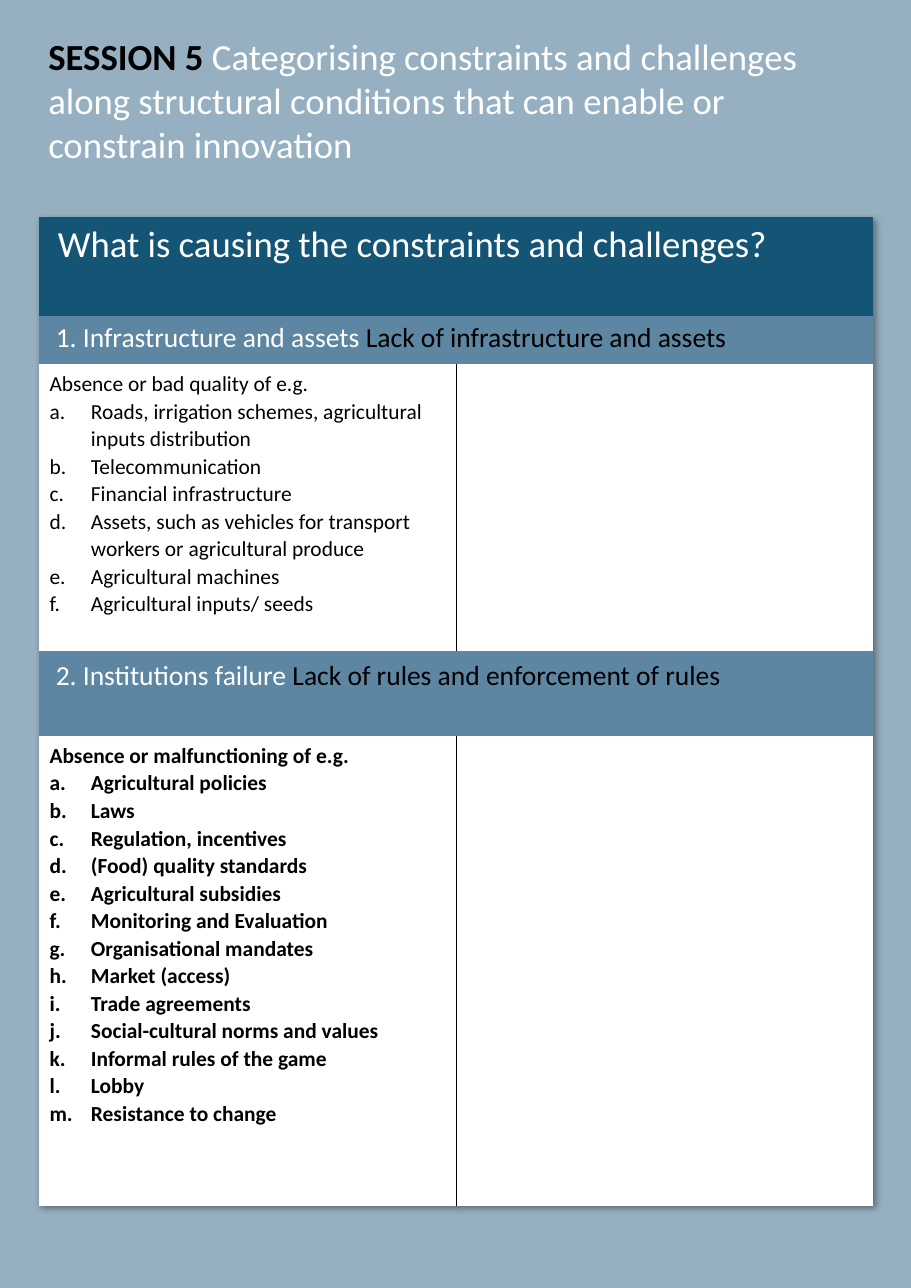
from lxml import etree
from pptx import Presentation
from pptx.dml.color import RGBColor
from pptx.enum.text import MSO_AUTO_SIZE
from pptx.oxml import parse_xml
from pptx.oxml.ns import qn
from pptx.util import Pt

FIT = MSO_AUTO_SIZE.SHAPE_TO_FIT_TEXT
FONT = "Calibri"
NS = 'xmlns:a="http://schemas.openxmlformats.org/drawingml/2006/main"'
PLAIN = "{2D5ABB26-0587-4C30-8999-92F81FD0307C}"  # no style, no grid
COLORS = {"back": "96B0C1", "head": "145576", "band": "5D86A3",
          "white": "FFFFFF", "black": "000000"}

# Content
TITLE = [("SESSION 5 ", "black", True),
         ("Categorising constraints and challenges along structural conditions "
          "that can enable or constrain innovation", "white", False)]
HEAD = [(" What is causing the constraints and challenges?", "white", False)]
ASSETS = [(" 1. Infrastructure and assets ", "white", False),
          ("Lack of infrastructure and assets", "black", False)]
RULES = [(" 2. Institutions failure", "white", False),
         (" Lack of rules and enforcement of rules", "black", False)]
ASSET_LIST = [
    "Absence or bad quality of e.g.",
    "Roads, irrigation schemes, agricultural inputs distribution",
    "Telecommunication",
    "Financial infrastructure",
    "Assets, such as vehicles for transport workers or agricultural produce",
    "Agricultural machines",
    "Agricultural inputs/ seeds",
]
RULE_LIST = [
    "Absence or malfunctioning of e.g.",
    "Agricultural policies",
    "Laws",
    "Regulation, incentives",
    "(Food) quality standards",
    "Agricultural subsidies",
    "Monitoring and Evaluation",
    "Organisational mandates",
    "Market (access)",
    "Trade agreements",
    "Social-cultural norms and values",
    "Informal rules of the game",
    "Lobby",
    "Resistance to change",
]
# Band rows: row, runs, fill, size, line spacing
BANDS = [(0, HEAD, "head", 24, 29.6), (1, ASSETS, "band", 18, None),
         (3, RULES, "band", 18, 24)]
# List rows: row, lines, bold
LISTS = [(2, ASSET_LIST, False), (4, RULE_LIST, True)]

# Layout in points
PAGE = (595.44, 841.68)
LEFT, TOP, WIDTH = 25.2, 141.84, 545.76
ROWS = [64.8, 31.4, 187.4, 55.6, 307.2]
INDENT = 27


def rgb(name):
    return RGBColor.from_string(COLORS[name])


def style(run, size, color, bold):
    font = run.font
    font.name, font.size, font.bold = FONT, Pt(size), bold
    font.color.rgb = rgb(color)


def write(para, runs, size, space=None):
    for text, color, bold in runs:
        run = para.add_run()
        run.text = text
        style(run, size, color, bold)
    if space:
        para.line_spacing = Pt(space)


def paint(cell, color):
    cell.fill.solid()
    cell.fill.fore_color.rgb = rgb(color)


def edge(cell, side):
    line = parse_xml(
        f'<a:{side} {NS} w="6350"><a:solidFill><a:srgbClr val="{COLORS["black"]}"/>'
        f'</a:solidFill></a:{side}>')
    cell._tc.get_or_add_tcPr().insert(0, line)


def fill_list(cell, lines, bold):
    frame = cell.text_frame
    frame.text = "\n".join(lines)
    for num, para in enumerate(frame.paragraphs):
        para.line_spacing = Pt(18)
        style(para.runs[0], 14, "black", bold)
        if num:
            props = para._p.get_or_add_pPr()
            props.set("marL", str(Pt(INDENT)))
            props.set("indent", str(-Pt(INDENT)))
            mark = etree.SubElement(props, qn("a:buAutoNum"))
            mark.set("type", "alphaLcPeriod")


def main():
    deck = Presentation()
    deck.slide_width, deck.slide_height = map(Pt, PAGE)
    slide = deck.slides.add_slide(deck.slide_layouts[6])
    slide.background.fill.solid()
    slide.background.fill.fore_color.rgb = rgb("back")

    # Title
    box = slide.shapes.add_textbox(Pt(24.48), Pt(18.72), Pt(WIDTH), Pt(94.32))
    box.text_frame.word_wrap = True
    box.text_frame.auto_size = FIT
    write(box.text_frame.paragraphs[0], TITLE, 24)

    # Table with a soft shadow
    frame = slide.shapes.add_table(len(ROWS), 2, Pt(LEFT), Pt(TOP),
                                   Pt(WIDTH), Pt(sum(ROWS)))
    table = frame.table
    table.first_row = table.horz_banding = False
    props = table._tbl.tblPr
    props.find(qn("a:tableStyleId")).text = PLAIN
    props.insert(0, parse_xml(
        f'<a:effectLst {NS}><a:outerShdw blurRad="50800" dist="38100" dir="2700000" '
        f'algn="tl" rotWithShape="0"><a:srgbClr val="{COLORS["black"]}">'
        '<a:alpha val="40000"/></a:srgbClr></a:outerShdw></a:effectLst>'))
    for row, high in zip(table.rows, ROWS):
        row.height = Pt(high)
    for col in table.columns:
        col.width = Pt(WIDTH / 2)

    # Heading bands
    for row, runs, fill, size, space in BANDS:
        cell = table.cell(row, 0)
        cell.merge(table.cell(row, 1))
        paint(cell, fill)
        write(cell.text_frame.paragraphs[0], runs, size, space)

    # Lists, each beside a blank answer cell
    for row, lines, bold in LISTS:
        left, right = table.cell(row, 0), table.cell(row, 1)
        for cell, side in ((left, "lnR"), (right, "lnL")):
            paint(cell, "white")
            edge(cell, side)
        fill_list(left, lines, bold)

    deck.save("out.pptx")


if __name__ == "__main__":
    main()
